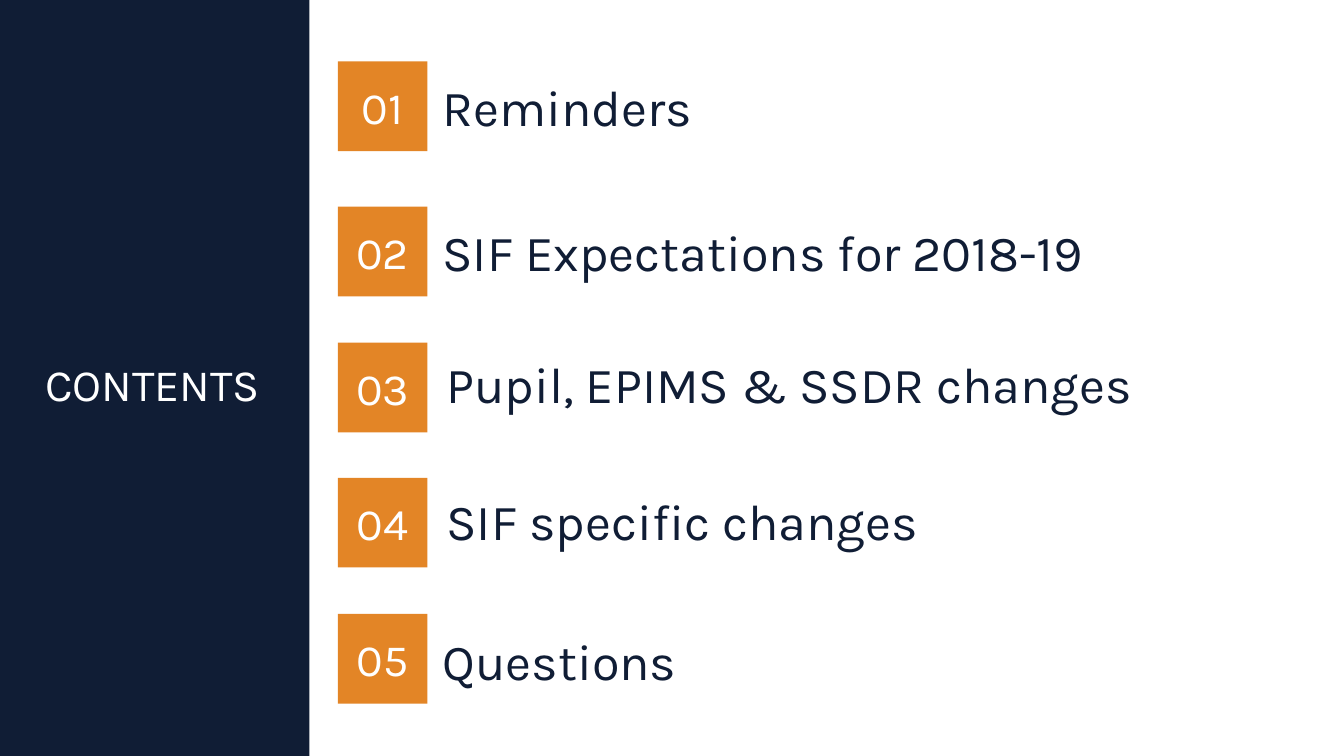
import pptx
import pptx.util
import pptx.dml.color
import pptx.enum.shapes
import pptx.enum.text

Inches = pptx.util.Inches
NAVY = "101D35"
ORANGE = "E38526"
WHITE = "FFFFFF"
FONT = "Karla"
BADGE_LEFT = 3.35
BADGE_SIZE = 0.89

CONTENTS = [
    ("Reminders", 0.61, (4.29, 0.61, 8.73, 0.89)),
    ("SIF Expectations for 2018-19", 2.05, (4.29, 2.05, 8.73, 0.89)),
    ("Pupil, EPIMS & SSDR changes", 3.4, (4.33, 3.45, 7.88, 0.71)),
    ("SIF specific changes", 4.74, (4.33, 4.81, 8.41, 0.71)),
    ("Questions", 6.09, (4.29, 6.14, 8.73, 0.83)),
]


def color(value):
    return pptx.dml.color.RGBColor.from_string(value)


def write_text(shape, text, size, text_color, centered):
    text_frame = shape.text_frame
    text_frame.word_wrap = True
    text_frame.vertical_anchor = pptx.enum.text.MSO_ANCHOR.MIDDLE
    text_frame.text = text
    paragraph = text_frame.paragraphs[0]
    alignment = pptx.enum.text.PP_ALIGN
    paragraph.alignment = alignment.CENTER if centered else alignment.LEFT
    font = paragraph.runs[0].font
    font.name = FONT
    font.size = pptx.util.Pt(size)
    font.color.rgb = color(text_color)


def add_rectangle(shapes, box, fill):
    shape = shapes.add_shape(
        pptx.enum.shapes.MSO_SHAPE.RECTANGLE, *map(Inches, box))
    shape.shadow.inherit = False
    shape.fill.solid()
    shape.fill.fore_color.rgb = color(fill)
    shape.line.fill.background()
    return shape


def add_label(shapes, box, text, size, text_color, centered=False):
    label = shapes.add_textbox(*map(Inches, box))
    write_text(label, text, size, text_color, centered)


def add_item(slide, number, title, badge_top, label_box):
    group = slide.shapes.add_group_shape()
    badge_box = (BADGE_LEFT, badge_top, BADGE_SIZE, BADGE_SIZE)
    badge = add_rectangle(group.shapes, badge_box, ORANGE)
    write_text(badge, f"{number:02d}", 32, WHITE, True)
    add_label(group.shapes, label_box, title, 36, NAVY)


def main():
    presentation = pptx.Presentation()
    presentation.slide_width = Inches(13.33)
    presentation.slide_height = Inches(7.5)
    slide = presentation.slides.add_slide(presentation.slide_layouts[6])
    add_rectangle(slide.shapes, (0, 0, 3.07, 7.5), NAVY)
    add_label(slide.shapes, (0, 3.49, 3.03, 0.64), "CONTENTS", 32, WHITE, True)
    for number, (title, badge_top, label_box) in enumerate(CONTENTS, 1):
        add_item(slide, number, title, badge_top, label_box)
    presentation.save("out.pptx")


if __name__ == "__main__":
    main()
